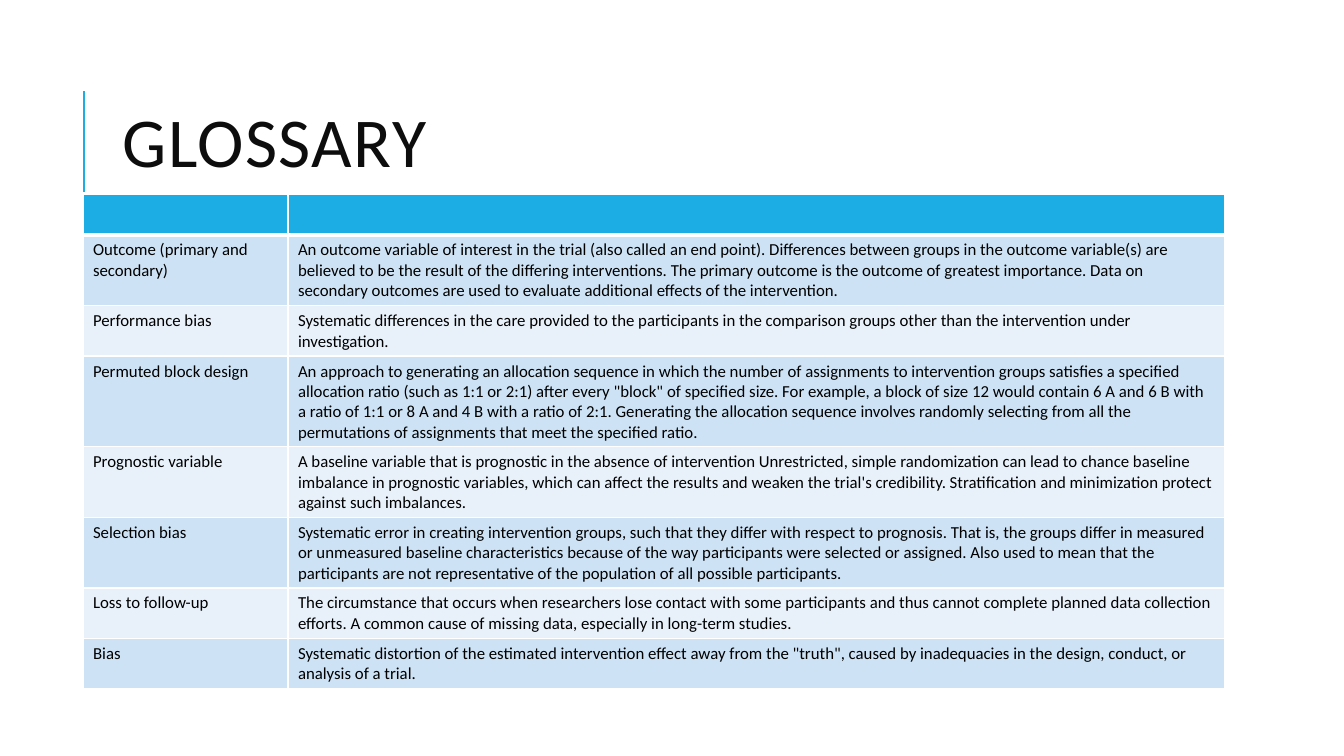
from lxml.etree import SubElement
from pptx import Presentation
from pptx.dml.color import RGBColor
from pptx.enum.shapes import MSO_CONNECTOR as Connector
from pptx.enum.text import MSO_ANCHOR as Anchor
from pptx.oxml.ns import qn
from pptx.util import Emu, Pt

EMU_PER_PX = 914400 / 100.8
FONT = "Calibri"
ACCENT = "1CADE4"
WHITE = "FFFFFF"
BANDS = ("CDE3F5", "E8F1FA")

ENTRIES = [
    ("Outcome (primary and secondary)",
     "An outcome variable of interest in the trial (also called an end point). "
     "Differences between groups in the outcome variable(s) are believed to be the "
     "result of the differing interventions. The primary outcome is the outcome of "
     "greatest importance. Data on secondary outcomes are used to evaluate additional "
     "effects of the intervention."),
    ("Performance bias",
     "Systematic differences in the care provided to the participants in the "
     "comparison groups other than the intervention under investigation."),
    ("Permuted block design",
     "An approach to generating an allocation sequence in which the number of "
     "assignments to intervention groups satisfies a specified allocation ratio (such "
     "as 1:1 or 2:1) after every \"block\" of specified size. For example, a block of "
     "size 12 would contain 6 A and 6 B with a ratio of 1:1 or 8 A and 4 B with a ratio "
     "of 2:1. Generating the allocation sequence involves randomly selecting from all "
     "the permutations of assignments that meet the specified ratio."),
    ("Prognostic variable",
     "A baseline variable that is prognostic in the absence of intervention "
     "Unrestricted, simple randomization can lead to chance baseline imbalance in "
     "prognostic variables, which can affect the results and weaken the trial's "
     "credibility. Stratification and minimization protect against such imbalances."),
    ("Selection bias",
     "Systematic error in creating intervention groups, such that they differ with "
     "respect to prognosis. That is, the groups differ in measured or unmeasured "
     "baseline characteristics because of the way participants were selected or "
     "assigned. Also used to mean that the participants are not representative of the "
     "population of all possible participants."),
    ("Loss to follow-up",
     "The circumstance that occurs when researchers lose contact with some "
     "participants and thus cannot complete planned data collection efforts. A common "
     "cause of missing data, especially in long-term studies."),
    ("Bias",
     "Systematic distortion of the estimated intervention effect away from the "
     "\"truth\", caused by inadequacies in the design, conduct, or analysis of a trial."),
]


def px(length):
    return Emu(round(length * EMU_PER_PX))


def colour(value):
    return RGBColor.from_string(value)


def add_run(paragraph, text, size, ink):
    run = paragraph.add_run()
    run.text = text
    run.font.name = FONT
    run.font.size = Pt(size)
    run.font.color.rgb = colour(ink)
    return run


def add_rule(slide, x, top, bottom):
    rule = slide.shapes.add_connector(
        Connector.STRAIGHT, px(x), px(bottom), px(x), px(top))
    rule.line.color.rgb = colour(ACCENT)
    rule.line.width = Pt(1.5)
    SubElement(rule.element.spPr, qn("a:effectLst"))


def add_title(slide, text, left, top, width, height):
    frame = slide.shapes.add_textbox(
        px(left), px(top), px(width), px(height)).text_frame
    frame.word_wrap = True
    frame.vertical_anchor = Anchor.MIDDLE
    heading = frame.paragraphs[0]
    heading.line_spacing = 0.8
    run = add_run(heading, text, 50, "0D0D0D")
    run.font._element.set("spc", "100")


def style_cell(cell, fill, top=1, bottom=1):
    properties = cell._tc.get_or_add_tcPr()
    for side, points in (("L", 1), ("R", 1), ("T", top), ("B", bottom)):
        border = SubElement(properties, qn(f"a:ln{side}"), w=str(Pt(points)))
        paint = SubElement(border, qn("a:solidFill"))
        SubElement(paint, qn("a:srgbClr"), val=WHITE)
    cell.fill.solid()
    cell.fill.fore_color.rgb = colour(fill)


def add_glossary(slide, left, top, column_widths, row_height):
    row_count = len(ENTRIES) + 1
    glossary = slide.shapes.add_table(
        row_count, len(column_widths), px(left), px(top),
        px(sum(column_widths)), px(row_height * row_count)).table
    for column, width in zip(glossary.columns, column_widths):
        column.width = px(width)
    for header in glossary.rows[0].cells:
        style_cell(header, ACCENT, bottom=3)
    for index, entry in enumerate(ENTRIES):
        for cell, text in zip(glossary.rows[index + 1].cells, entry):
            style_cell(cell, BANDS[index % 2], top=1 if index else 3)
            add_run(cell.text_frame.paragraphs[0], text, 12, "000000")


def main():
    deck = Presentation()
    deck.slide_width, deck.slide_height = px(1344), px(756)
    slide = deck.slides.add_slide(deck.slide_layouts[6])
    add_rule(slide, 84, 91, 192)
    add_title(slide, "GLOSSARY", 113, 65, 1072, 165)
    add_glossary(slide, 83, 194, (205, 937), 41)
    deck.save("out.pptx")


if __name__ == "__main__":
    main()
